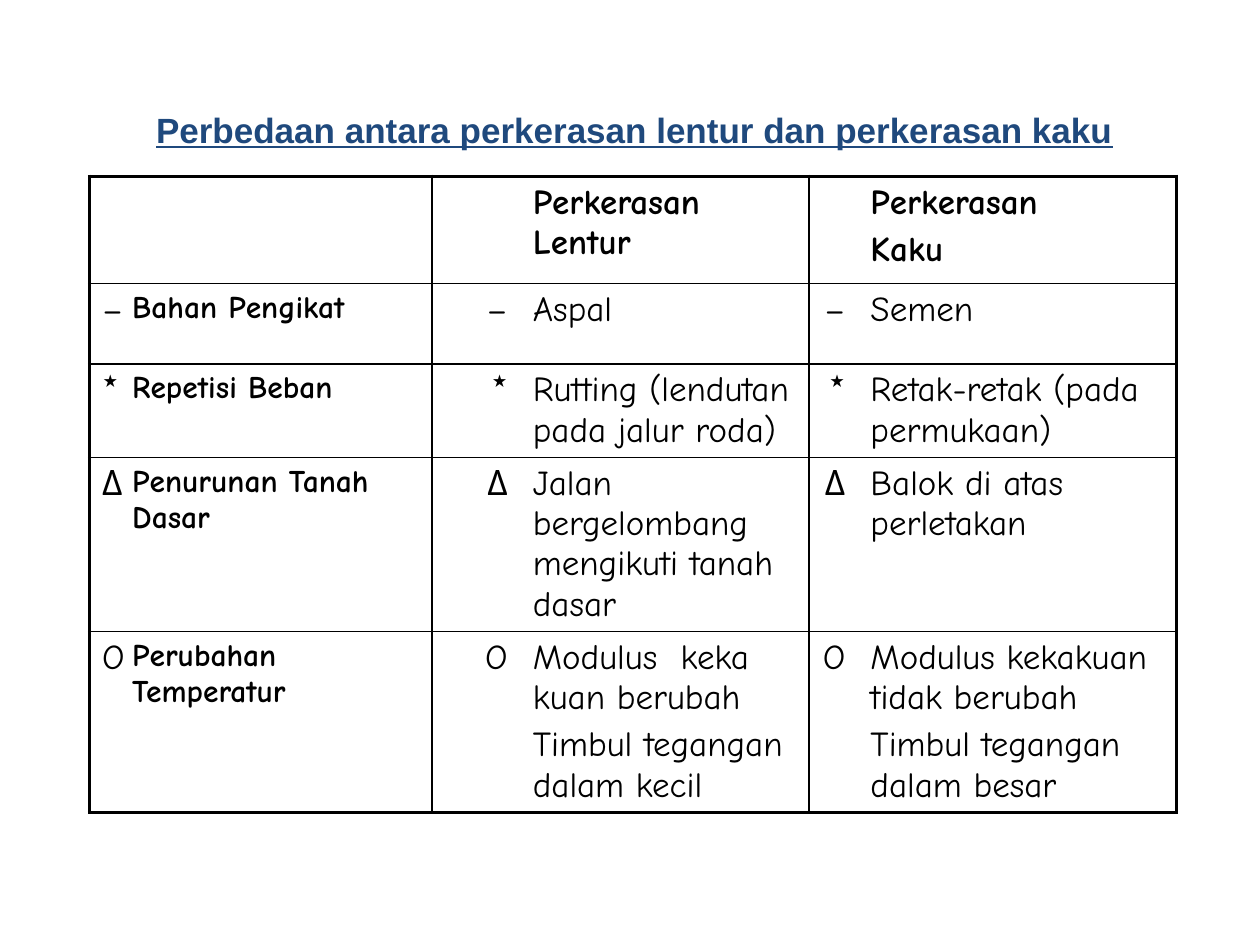
from dataclasses import dataclass

from lxml import etree
from pptx import Presentation
from pptx.dml.color import RGBColor
from pptx.enum.text import MSO_AUTO_SIZE, PP_ALIGN
from pptx.oxml.ns import qn
from pptx.table import _Cell
from pptx.text.text import TextFrame
from pptx.util import Pt

LEFT, RIGHT = PP_ALIGN.LEFT, PP_ALIGN.RIGHT
BLACK, BLUE = "000000", "1F497D"
THIN, THICK = 1, 2.25
COLS = [16.56, 178.56, 50.4, 164.88, 28.08, 182.16]
ROWS = [61.2, 46.08, 47.52, 55.44, 79.2]


@dataclass
class Style:
    size: float = 20
    bold: bool = False
    align: PP_ALIGN = LEFT
    font: str = "Comic Neue"
    color: str = BLACK
    line: bool = False
    gap: float = 4


@dataclass
class Topic:
    mark: str
    name: str
    soft: str
    hard: str


BODY = Style()
HEAD = Style(bold=True)
NAME = Style(size=18, bold=True, gap=3.6)
MARK = Style(align=RIGHT)
TITLE = Style(bold=True, font="Arial", color=BLUE, line=True, gap=0)
STYLES = [BODY, NAME, MARK, BODY, MARK, BODY]

TOPICS = [
    Topic("", "", "Perkerasan Lentur", "Perkerasan\nKaku"),
    Topic("–", "Bahan Pengikat", "Aspal", "Semen"),
    Topic("٭", "Repetisi Beban", "Rutting (lendutan pada jalur roda)",
          "Retak-retak (pada permukaan)"),
    Topic("Δ", "Penurunan Tanah Dasar",
          "Jalan bergelombang mengikuti tanah dasar",
          "Balok di atas perletakan"),
    Topic("O", "Perubahan Temperatur",
          "Modulus  keka kuan berubah\nTimbul tegangan dalam kecil",
          "Modulus kekakuan tidak berubah\nTimbul tegangan dalam besar"),
]


def paint(font, color: str) -> None:
    font.color.rgb = RGBColor.from_string(color)


def write(frame: TextFrame, text: str, style: Style) -> None:
    frame.text = text
    for para in frame.paragraphs:
        para.alignment = style.align
        para.space_before = Pt(style.gap)
        for run in para.runs:
            font = run.font
            font.name, font.size = style.font, Pt(style.size)
            font.bold, font.underline = style.bold, style.line
            paint(font, style.color)


def edge(cell: _Cell, side: str, width: float) -> None:
    """Add one cell border; a width of 0 hides it."""
    props = cell._tc.get_or_add_tcPr()
    line = etree.SubElement(props, qn(f"a:ln{side}"), w=str(Pt(width)))
    if width:
        fill = etree.SubElement(line, qn("a:solidFill"))
        etree.SubElement(fill, qn("a:srgbClr"), val=BLACK)
    else:
        etree.SubElement(line, qn("a:noFill"))


def frame_cell(cell: _Cell, row: int, col: int) -> None:
    """Border the table thickly and each mark and text pair thinly."""
    last, end = len(ROWS) - 1, len(COLS) - 1
    pair = col % 2
    edge(cell, "L", THICK if col == 0 else 0 if pair else THIN)
    edge(cell, "R", THICK if col == end else THIN if pair else 0)
    edge(cell, "T", THICK if row == 0 else THIN)
    edge(cell, "B", THICK if row == last else THIN)
    cell.fill.background()


def draw_table(slide) -> None:
    shape = slide.shapes.add_table(len(ROWS), len(COLS), Pt(51.12), Pt(100.8),
                                   Pt(sum(COLS)), Pt(sum(ROWS)))
    table = shape.table
    table.first_row = table.horz_banding = False
    for col, width in zip(table.columns, COLS):
        col.width = Pt(width)
    for row, height in zip(table.rows, ROWS):
        row.height = Pt(height)
    shape.height = Pt(421.2)
    for r, topic in enumerate(TOPICS):
        mark = topic.mark
        texts = [mark, topic.name, mark, topic.soft, mark, topic.hard]
        for c, (text, style) in enumerate(zip(texts, STYLES)):
            cell = table.cell(r, c)
            write(cell.text_frame, text, style if r else HEAD)
            frame_cell(cell, r, c)


def draw_title(slide) -> None:
    box = slide.shapes.add_textbox(Pt(82.08), Pt(58.32), Pt(565.92), Pt(30.96))
    frame = box.text_frame
    frame.word_wrap = False
    frame.auto_size = MSO_AUTO_SIZE.SHAPE_TO_FIT_TEXT
    write(frame, "Perbedaan antara perkerasan lentur dan perkerasan kaku",
          TITLE)


def main() -> None:
    deck = Presentation()
    deck.slide_width, deck.slide_height = Pt(720), Pt(540)
    slide = deck.slides.add_slide(deck.slide_layouts[6])
    draw_table(slide)
    draw_title(slide)
    deck.save("out.pptx")


if __name__ == "__main__":
    main()
